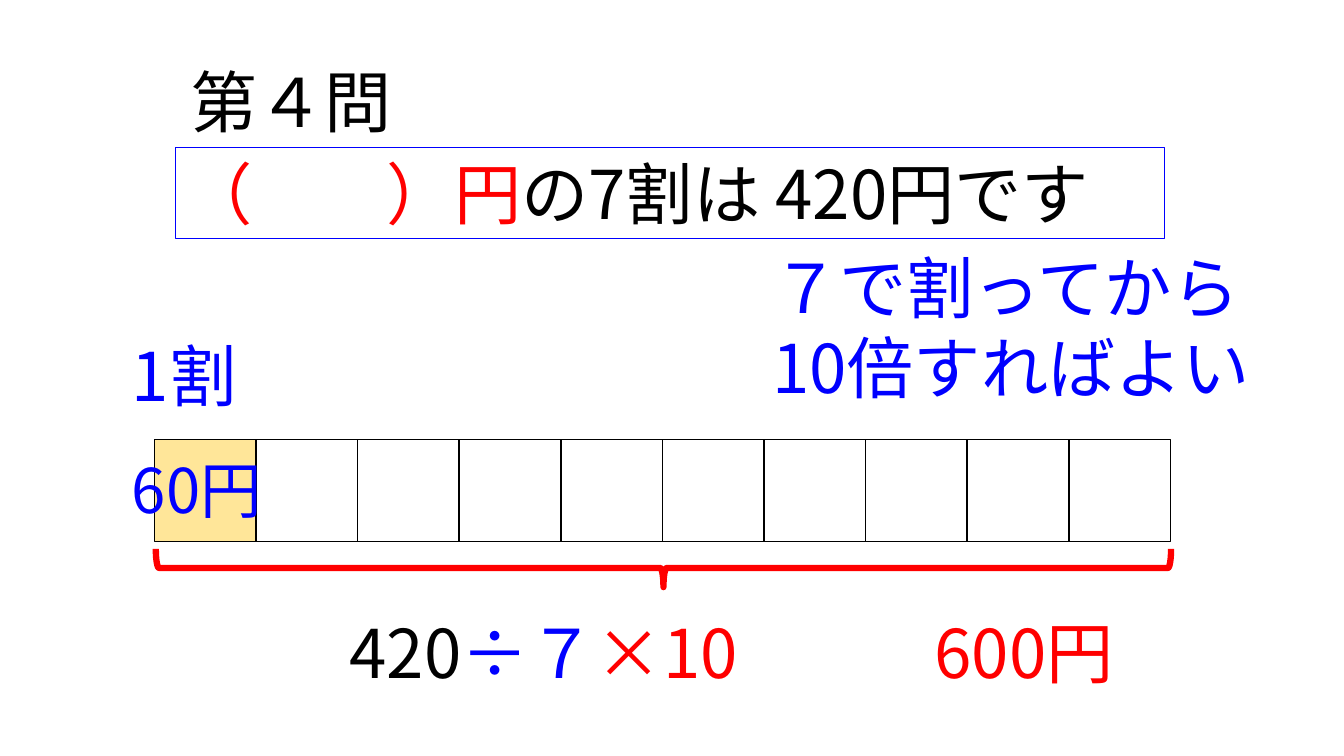
from lxml import etree
from pptx import Presentation
from pptx.dml.color import RGBColor
from pptx.enum.shapes import MSO_SHAPE as Shape
from pptx.enum.text import MSO_ANCHOR as Anchor, PP_ALIGN as Align
from pptx.oxml.ns import qn
from pptx.util import Inches, Pt

COLORS = {"black": "000000", "blue": "0000FF", "red": "FF0000", "yellow": "FFE699"}
FONT = "Noto Sans CJK JP"


def write(shape, lines, size=48, wrap=True):
    """Fill a shape with lines, each a list of (text, colour) spans."""
    frame = shape.text_frame
    frame.word_wrap = wrap
    frame.vertical_anchor = Anchor.TOP
    for index, spans in enumerate(lines):
        para = frame.add_paragraph() if index else frame.paragraphs[0]
        para.alignment = Align.LEFT
        para.line_spacing = Pt(size * 1.2)
        for text, color in spans:
            span = para.add_run()
            span.text = text
            span.font.size = Pt(size)
            span.font.name = FONT
            span.font.color.rgb = RGBColor.from_string(COLORS[color])
            # East Asian typeface
            etree.SubElement(span.font._element, qn("a:ea"), typeface=FONT)


def add_outline(kind, left, top, width, height, color, weight):
    """Add an unfilled preset shape with a coloured line."""
    shape = page.shapes.add_shape(
        kind, Inches(left), Inches(top), Inches(width), Inches(height))
    shape.shadow.inherit = False
    shape.fill.background()
    shape.line.color.rgb = RGBColor.from_string(COLORS[color])
    shape.line.width = Pt(weight)
    return shape


deck = Presentation()
deck.slide_width, deck.slide_height = Inches(13.33), Inches(7.5)
page = deck.slides.add_slide(deck.slide_layouts[6])

# Bar of ten equal parts, the first one highlighted
CELL = 1.01
for index in range(10):
    cell = add_outline(Shape.RECTANGLE, 1.53 + index * 9.07 / 9, 4.36, CELL, CELL, "black", 1)
    if index == 0:
        cell.fill.solid()
        cell.fill.fore_color.rgb = RGBColor.from_string(COLORS["yellow"])

# Brace under the whole bar
brace = add_outline(Shape.RIGHT_BRACE, 6.39, 0.6, 0.38, 10.07, "red", 4.5)
brace.rotation = 90

# Labels: left, top, width, height, size, lines
labels = [
    (1.21, 4.43, 1.81, 0.84, 44, [[("60円", "blue")]]),
    (7.56, 2.39, 5.28, 1.72, 48, [[("７で割ってから", "blue")], [("10倍すればよい", "blue")]]),
    (1.79, 0.55, 2.36, 0.91, 48, [[("第４問", "black")]]),
    (3.37, 6.02, 4.7, 0.91, 48, [[("420", "black"), ("÷７", "blue"), ("×10", "red")]]),
    (9.17, 6.02, 2.44, 0.91, 48, [[("600円", "red")]]),
    (1.21, 3.27, 1.56, 0.91, 48, [[("1割", "blue")]]),
]
for left, top, width, height, size, lines in labels:
    box = page.shapes.add_textbox(Inches(left), Inches(top), Inches(width), Inches(height))
    write(box, lines, size)

# Framed question
question = add_outline(Shape.RECTANGLE, 1.74, 1.46, 9.81, 0.91, "blue", 0.75)
write(question, [[("（　　）円", "red"), ("の7割は 420円です", "black")]], wrap=False)

deck.save("out.pptx")
